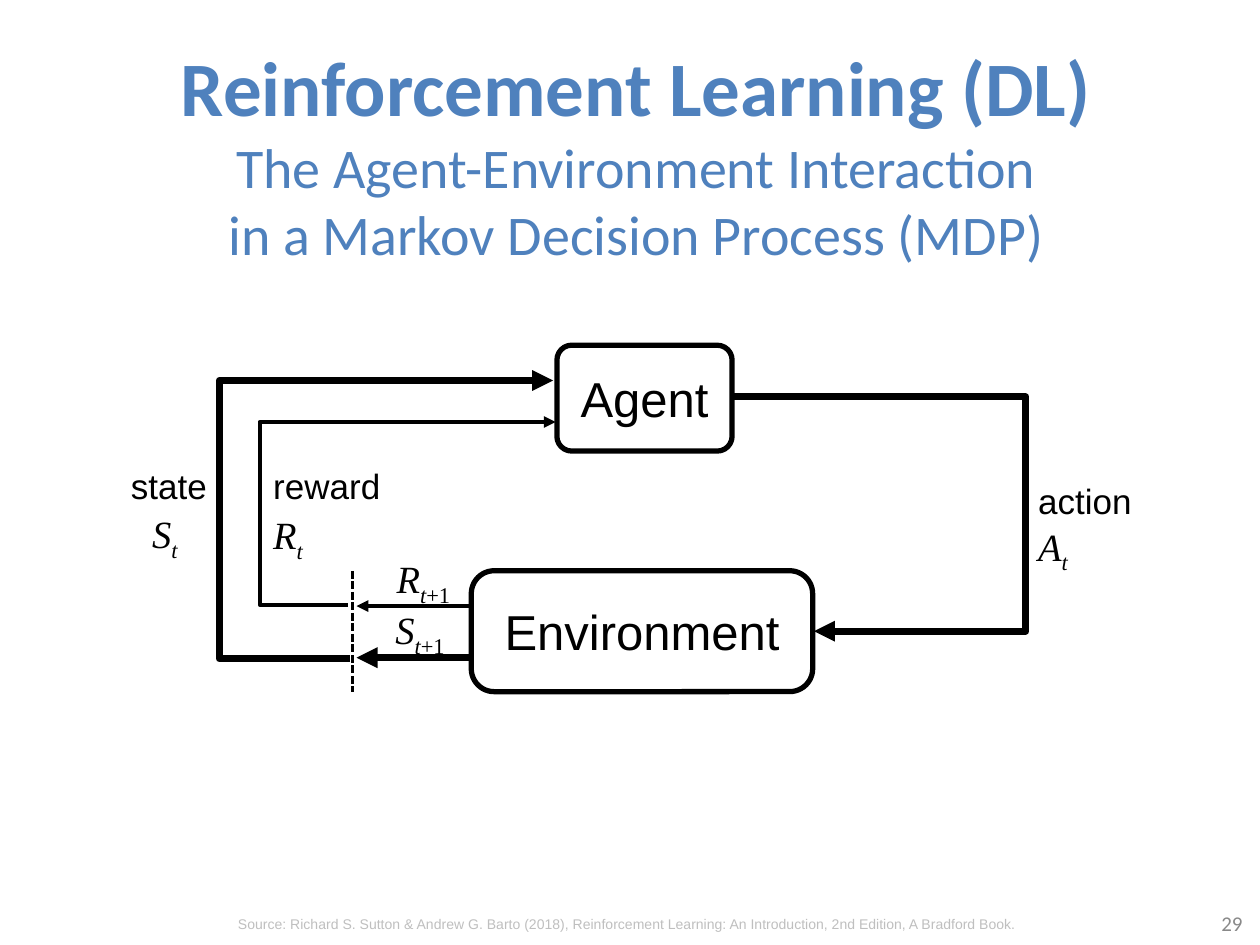
"""Build a slide showing the agent-environment loop of a Markov decision process."""
from dataclasses import dataclass, replace
from typing import Optional

from lxml import etree
from pptx import Presentation
from pptx import util as u
from pptx.dml.color import RGBColor
from pptx.enum import dml, shapes, text
from pptx.oxml import ns

EMU_PER_PX = 9144


@dataclass(frozen=True)
class Theme:
    accent: str = "4F81BD"
    ink: str = "000000"
    muted: str = "898989"
    pale: str = "BFBFBF"
    heading_font: str = "Calibri"
    label_font: str = "Arial"
    symbol_font: str = "Times New Roman"
    title_size: int = 44
    subtitle_size: int = 32
    node_size: int = 28
    symbol_size: int = 22
    label_size: int = 20
    number_size: int = 12
    source_size: int = 8
    node_line: float = 3
    thick_line: float = 4
    thin_line: float = 2.25
    dash_line: float = 1.5


THEME = Theme()


@dataclass(frozen=True)
class Style:
    font: str
    size: int
    color: str = THEME.ink
    bold: bool = False
    italic: bool = False
    baseline: int = 0


@dataclass(frozen=True)
class Box:
    left: int
    top: int
    width: int
    height: int


@dataclass(frozen=True)
class Node:
    name: str
    box: Box
    rounding: float


@dataclass(frozen=True)
class Link:
    start: tuple[int, int]
    end: tuple[int, int]
    weight: float
    bend_x: Optional[int] = None
    arrow: bool = True
    dashed: bool = False


@dataclass(frozen=True)
class Label:
    pieces: tuple[str, ...]
    box: Box
    styles: tuple[Style, ...]
    align: text.PP_ALIGN = text.PP_ALIGN.LEFT
    anchor: text.MSO_ANCHOR = text.MSO_ANCHOR.TOP
    stacked: bool = False
    wrap: bool = False


TITLE = Style(THEME.heading_font, THEME.title_size, THEME.accent, bold=True)
SUBTITLE = replace(TITLE, size=THEME.subtitle_size, bold=False)
NUMBER = Style(THEME.heading_font, THEME.number_size, THEME.muted)
SOURCE = Style(THEME.label_font, THEME.source_size, THEME.pale)
NODE = Style(THEME.label_font, THEME.node_size)
WORD = Style(THEME.label_font, THEME.label_size)
SYMBOL = Style(THEME.symbol_font, THEME.symbol_size, italic=True)
SUBSCRIPT = replace(SYMBOL, baseline=-25000)
SYMBOL_STYLES = (SYMBOL, SUBSCRIPT, replace(SUBSCRIPT, italic=False))

NODES = (
    Node("Agent", Box(442, 274, 139, 84), 0.14),
    Node("Environment", Box(374, 453, 271, 96), 0.19),
)
LINKS = (
    Link((581, 315), (646, 501), THEME.thick_line, bend_x=814),
    Link((278, 523), (439, 302), THEME.thick_line, bend_x=174),
    Link((374, 522), (283, 522), THEME.thick_line),
    Link((280, 453), (280, 549), THEME.dash_line, arrow=False, dashed=True),
    Link((374, 481), (283, 481), THEME.thin_line),
    Link((276, 480), (441, 335), THEME.thin_line, bend_x=206),
)
LABELS = (
    Label(("Reinforcement Learning (DL)", "The Agent-Environment Interaction",
           "in a Markov Decision Process (MDP)"), Box(26, 13, 958, 217),
          (TITLE, SUBTITLE, SUBTITLE), text.PP_ALIGN.CENTER,
          text.MSO_ANCHOR.MIDDLE, stacked=True, wrap=True),
    Label(("29",), Box(763, 713, 233, 40), (NUMBER,), text.PP_ALIGN.RIGHT,
          text.MSO_ANCHOR.MIDDLE, wrap=True),
    Label(("Source: Richard S. Sutton & Andrew G. Barto (2018), Reinforcement "
           "Learning: An Introduction, 2nd Edition, A Bradford Book.",),
          Box(48, 722, 900, 24), (SOURCE,), text.PP_ALIGN.CENTER, wrap=True),
    Label(("action",), Box(814, 376, 95, 44), (WORD,)),
    Label(("reward",), Box(207, 364, 106, 44), (WORD,)),
    Label(("state",), Box(94, 364, 81, 44), (WORD,)),
    Label(("A", "t"), Box(814, 410, 45, 47), SYMBOL_STYLES),
    Label(("R", "t"), Box(207, 401, 45, 47), SYMBOL_STYLES),
    Label(("S", "t"), Box(111, 400, 41, 47), SYMBOL_STYLES),
    Label(("S", "t", "+1"), Box(304, 476, 66, 47), SYMBOL_STYLES),
    Label(("R", "t", "+1"), Box(305, 436, 69, 47), SYMBOL_STYLES),
)


def px(*lengths: int) -> list[u.Emu]:
    """Turn px lengths into EMU."""
    return [u.Emu(length * EMU_PER_PX) for length in lengths]


def bounds(box: Box) -> list[u.Emu]:
    """Give the EMU position and size of a box."""
    return px(box.left, box.top, box.width, box.height)


def style_run(run, style: Style) -> None:
    """Apply a text style to one run."""
    run.font.name = style.font
    run.font.size = u.Pt(style.size)
    run.font.bold = style.bold
    run.font.italic = style.italic
    run.font.color.rgb = RGBColor.from_string(style.color)
    if style.baseline:
        run._r.get_or_add_rPr().set("baseline", str(style.baseline))


def style_line(line, weight: float) -> None:
    """Give a line the ink colour and a weight in points."""
    line.color.rgb = RGBColor.from_string(THEME.ink)
    line.width = u.Pt(weight)


def draw_node(slide, node: Node) -> None:
    """Draw a rounded box with its centred name."""
    shape = slide.shapes.add_shape(shapes.MSO_SHAPE.ROUNDED_RECTANGLE, *bounds(node.box))
    shape.adjustments[0] = node.rounding
    shape.shadow.inherit = False
    shape.fill.background()
    style_line(shape.line, THEME.node_line)
    frame = shape.text_frame
    frame.margin_left = frame.margin_right = frame.margin_top = frame.margin_bottom = 0
    frame.vertical_anchor = text.MSO_ANCHOR.MIDDLE
    frame.text = node.name
    paragraph = frame.paragraphs[0]
    paragraph.alignment = text.PP_ALIGN.CENTER
    style_run(paragraph.runs[0], NODE)


def draw_link(slide, link: Link) -> None:
    """Draw a straight or bent connector."""
    bent = link.bend_x is not None
    kind = shapes.MSO_CONNECTOR.ELBOW if bent else shapes.MSO_CONNECTOR.STRAIGHT
    connector = slide.shapes.add_connector(kind, *px(*link.start, *link.end))
    style_line(connector.line, link.weight)
    properties = connector._element.spPr
    if link.dashed:
        connector.line.dash_style = dml.MSO_LINE.SQUARE_DOT
    if link.arrow:
        etree.SubElement(properties.find(ns.qn("a:ln")), ns.qn("a:tailEnd"), type="triangle")
    if bent:
        ratio = (link.bend_x - link.start[0]) / (link.end[0] - link.start[0])
        guides = properties.find(ns.qn("a:prstGeom")).get_or_add_avLst()
        etree.SubElement(guides, ns.qn("a:gd"), name="adj1", fmla=f"val {round(ratio * 100000)}")
    etree.SubElement(properties, ns.qn("a:effectLst"))


def draw_label(slide, label: Label) -> None:
    """Draw a text box whose pieces each have their own style."""
    frame = slide.shapes.add_textbox(*bounds(label.box)).text_frame
    frame.word_wrap = label.wrap
    frame.vertical_anchor = label.anchor
    paragraph = frame.paragraphs[0]
    paragraph.alignment = label.align
    for index, (piece, style) in enumerate(zip(label.pieces, label.styles)):
        if index and label.stacked:
            paragraph.add_line_break()
        run = paragraph.add_run()
        run.text = piece
        style_run(run, style)


def main() -> None:
    """Build and save the slide."""
    presentation = Presentation()
    presentation.slide_width, presentation.slide_height = px(1000, 750)
    slide = presentation.slides.add_slide(presentation.slide_layouts[6])
    for items, draw in ((NODES, draw_node), (LINKS, draw_link), (LABELS, draw_label)):
        for item in items:
            draw(slide, item)
    presentation.save("out.pptx")


if __name__ == "__main__":
    main()
